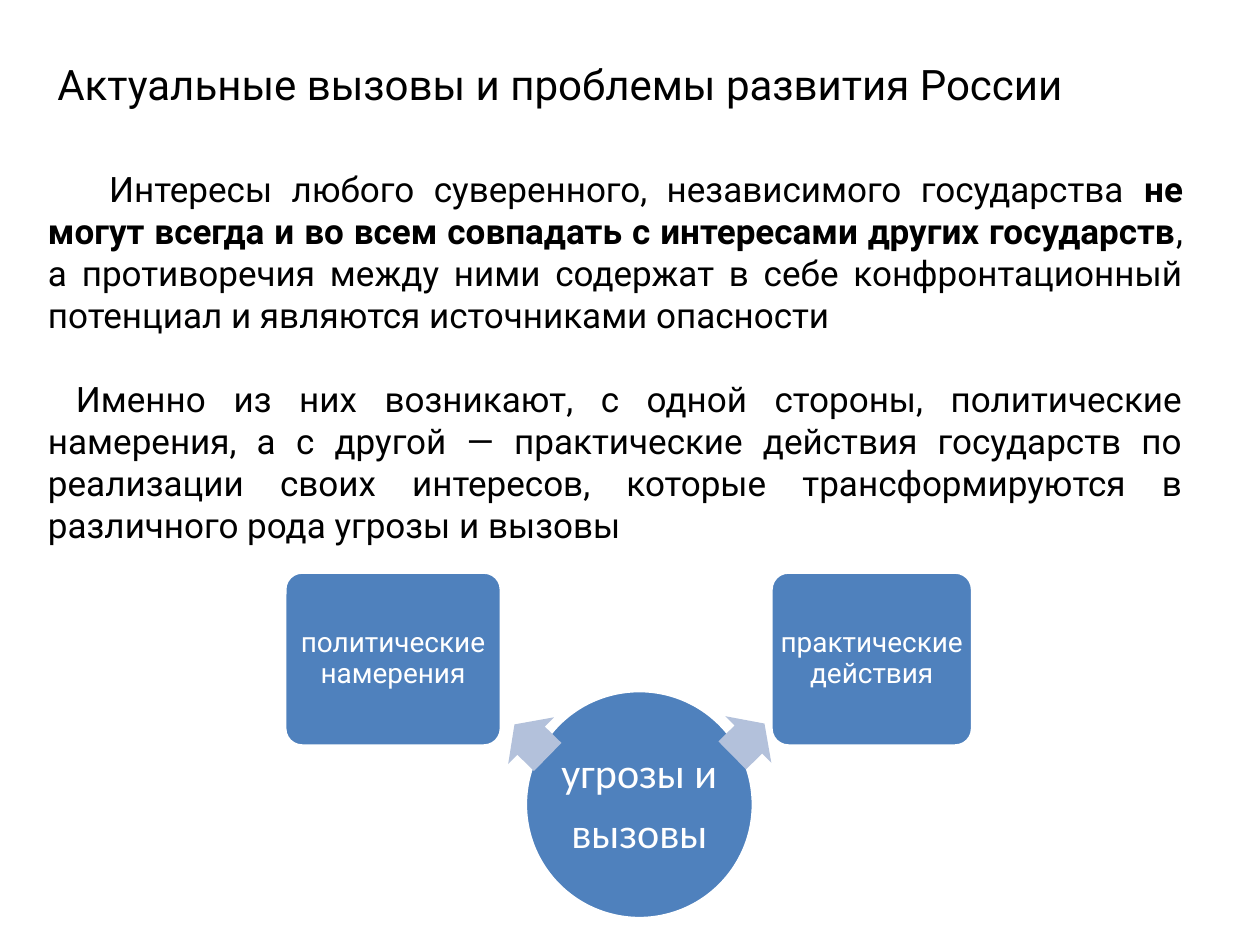
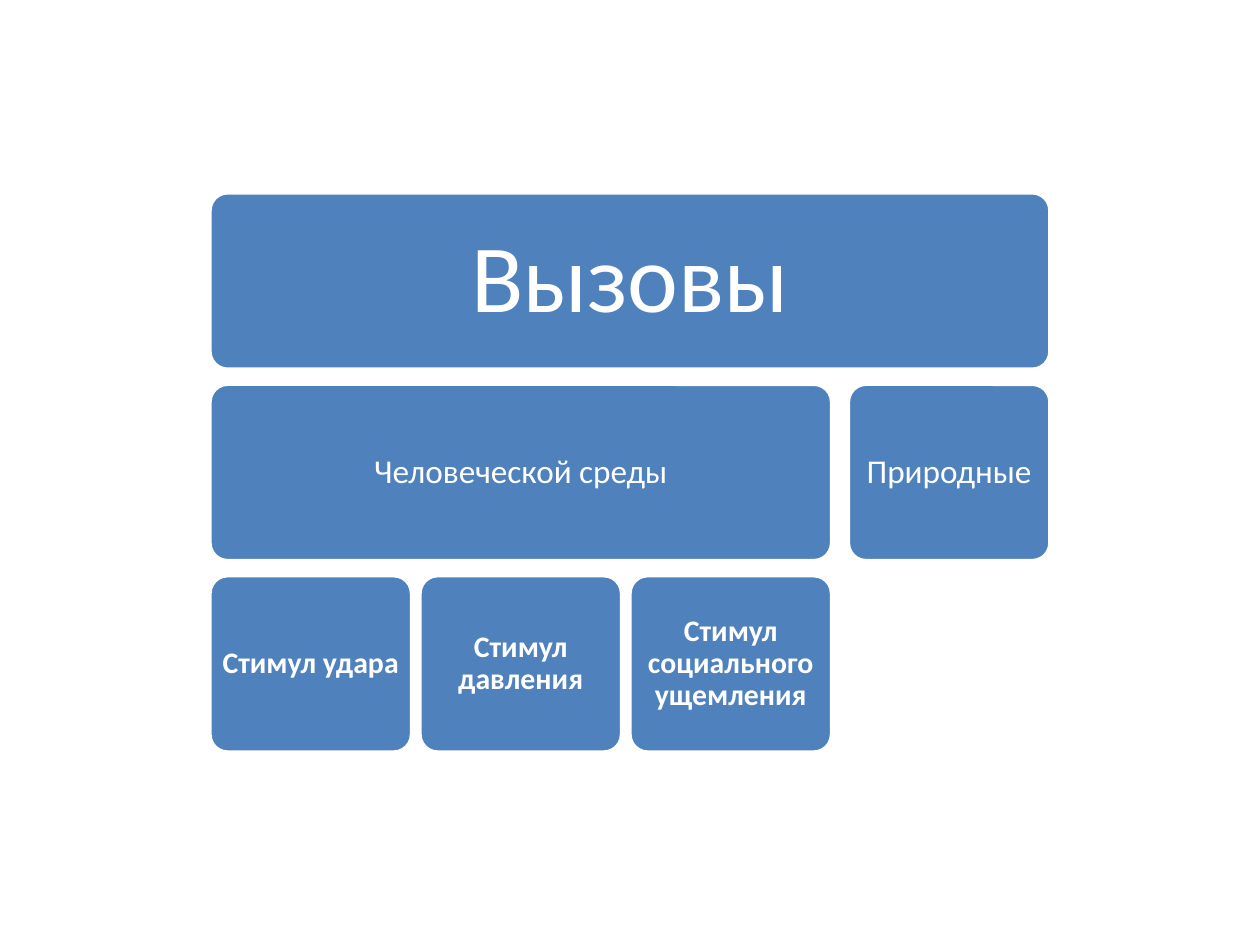
from pptx import Presentation
from pptx.dml.color import RGBColor
from pptx.enum.shapes import MSO_SHAPE
from pptx.enum.text import MSO_ANCHOR, MSO_AUTO_SIZE, PP_ALIGN
from pptx.oxml.ns import qn
from pptx.util import Pt
from lxml import etree

BLACK = RGBColor(0x00, 0x00, 0x00)
WHITE = RGBColor(0xFF, 0xFF, 0xFF)
BLUE = RGBColor(0x4F, 0x81, 0xBD)
PALE = RGBColor(0xB3, 0xC1, 0xDB)

ROUND = MSO_SHAPE.ROUNDED_RECTANGLE
OVAL = MSO_SHAPE.OVAL
LEFT_ARROW = MSO_SHAPE.LEFT_ARROW
RIGHT_ARROW = MSO_SHAPE.RIGHT_ARROW
CENTER, JUSTIFY = PP_ALIGN.CENTER, PP_ALIGN.JUSTIFY
MIDDLE, TOP = MSO_ANCHOR.MIDDLE, MSO_ANCHOR.TOP
NO_FIT = MSO_AUTO_SIZE.NONE

TITLE_LAYOUT, BLANK_LAYOUT = 1, 6


def apply(obj, form):
    for name, value in form.items():
        setattr(obj, name, value)


class Deck:
    text = "Roboto"
    label = "Calibri"
    frame = dict(auto_size=NO_FIT, word_wrap=True, vertical_anchor=MIDDLE,
                 margin_left=0, margin_right=0, margin_top=0, margin_bottom=0)

    def __init__(self):
        self.prs = Presentation()
        apply(self.prs, dict(slide_width=Pt(720), slide_height=Pt(540)))
        self.slide = None

    def page(self, layout):
        self.slide = self.prs.slides.add_slide(self.prs.slide_layouts[layout])

    def place(self, shape, box):
        names = ("left", "top", "width", "height")
        apply(shape, {n: Pt(v) for n, v in zip(names, box)})

    def run(self, para, text, font, size, color, bold=False):
        run = para.add_run()
        run.text = text
        apply(run.font, dict(name=font, size=Pt(size), bold=bold))
        run.font.color.rgb = color

    def title(self, text, box):
        shape = self.slide.shapes.title
        self.place(shape, box)
        apply(shape.text_frame, self.frame)
        para = shape.text_frame.paragraphs[0]
        para.alignment = CENTER
        self.run(para, text, self.text, 24, BLACK)

    def body(self, items, box, gap):
        """Each item is a first-line indent and a list of (text, bold)."""
        shape = self.slide.placeholders[1]
        self.place(shape, box)
        frame = shape.text_frame
        apply(frame, {**self.frame, "vertical_anchor": TOP})
        for i, (indent, parts) in enumerate(items):
            para = frame.add_paragraph() if i else frame.paragraphs[0]
            apply(para, dict(alignment=JUSTIFY, space_before=Pt(gap if i else 0)))
            props = para._p.get_or_add_pPr()
            props.set("marL", "0")
            props.set("indent", str(Pt(indent)))
            etree.SubElement(props, qn("a:buNone"))
            for text, bold in parts:
                self.run(para, text, self.text, 20, BLACK, bold)

    def shape(self, kind, box, fill, adjust=()):
        shape = self.slide.shapes.add_shape(kind, *map(Pt, box))
        shape.shadow.inherit = False
        shape.fill.solid()
        shape.fill.fore_color.rgb = fill
        for i, value in enumerate(adjust):
            shape.adjustments[i] = value
        return shape

    def tile(self, lines, box, size, font=label, bold=False, kind=ROUND):
        shape = self.shape(kind, box, BLUE, (0.1,) if kind == ROUND else ())
        shape.line.color.rgb = WHITE
        shape.line.width = Pt(2)
        frame = shape.text_frame
        apply(frame, {**self.frame, "word_wrap": kind == ROUND})
        for i, line in enumerate(lines):
            para = frame.add_paragraph() if i else frame.paragraphs[0]
            gap = Pt(0.35 * size if i else 0)
            apply(para, dict(alignment=CENTER, line_spacing=0.9, space_before=gap))
            self.run(para, line, font, size, WHITE, bold)

    def arrow(self, kind, box, turn):
        shape = self.shape(kind, box, PALE, (0.6, 0.5))
        shape.line.fill.background()
        shape.rotation = turn


def threats(deck):
    deck.page(TITLE_LAYOUT)
    deck.title("Актуальные вызовы и проблемы развития России", (25, 30, 590, 36))
    deck.body([
        (35, [("Интересы любого суверенного, независимого государства ", False),
              ("не могут всегда и во всем совпадать с интересами других государств", True),
              (", а противоречия между ними содержат в себе конфронтационный "
               "потенциал и являются источниками опасности", False)]),
        (16, [("Именно из них возникают, с одной стороны, политические намерения, "
               "а с другой — практические действия государств по реализации своих "
               "интересов, которые трансформируются в различного рода угрозы и "
               "вызовы", False)]),
    ], (27.4, 95.8, 648.6, 419), gap=24)

    # Circle with its two outcomes
    deck.tile(["угрозы и", "вызовы"], (300.2, 394.6, 130.3, 130.3), 24, kind=OVAL)
    deck.arrow(LEFT_ARROW, (290.2, 404.6, 26.6, 37.4), 44.4)
    deck.tile(["политические намерения"], (162.7, 326.9, 123.8, 99.4), 16, deck.text)
    deck.arrow(RIGHT_ARROW, (414.7, 403.9, 25.9, 37.4), 315.4)
    deck.tile(["практические действия"], (440.6, 326.9, 115.2, 99.4), 16, deck.text)


def tree(deck):
    deck.page(BLANK_LAYOUT)
    left, top, wide, high, gap = 120, 110.2, 115.2, 100.8, 4.8
    step, drop = wide + gap, 109.4
    group = 2 * step + wide
    side = group + 2 * gap

    # Top level and its two branches
    deck.tile(["Вызовы"], (left, top, side + wide, high), 55)
    deck.tile(["Человеческой среды"], (left, top + drop, group, high), 19)
    deck.tile(["Природные"], (left + side, top + drop, wide, high), 19)

    # Kinds of stimulus
    kinds = ("Стимул удара", "Стимул давления", "Стимул социального ущемления")
    for i, kind in enumerate(kinds):
        deck.tile([kind], (left + i * step, top + 2 * drop, wide, high), 17, bold=True)


def main():
    deck = Deck()
    threats(deck)
    tree(deck)
    deck.prs.save("out.pptx")


if __name__ == "__main__":
    main()
